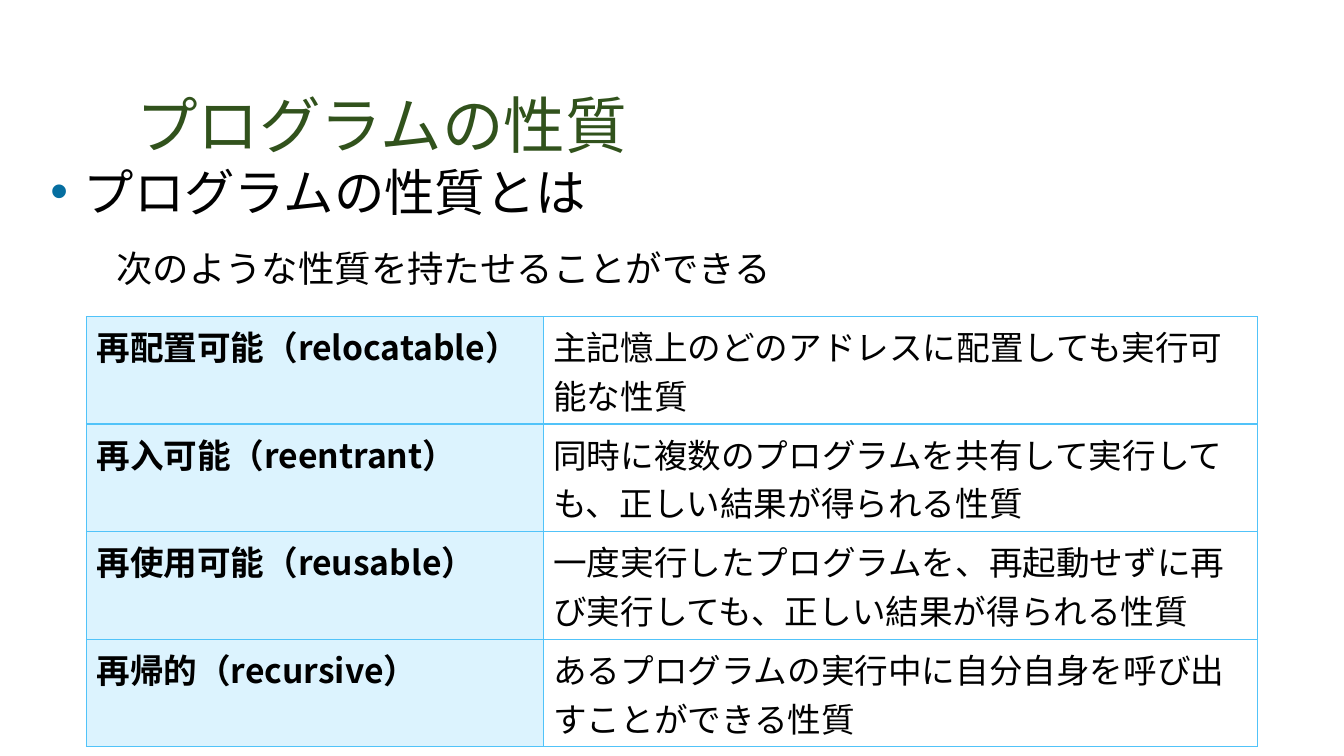
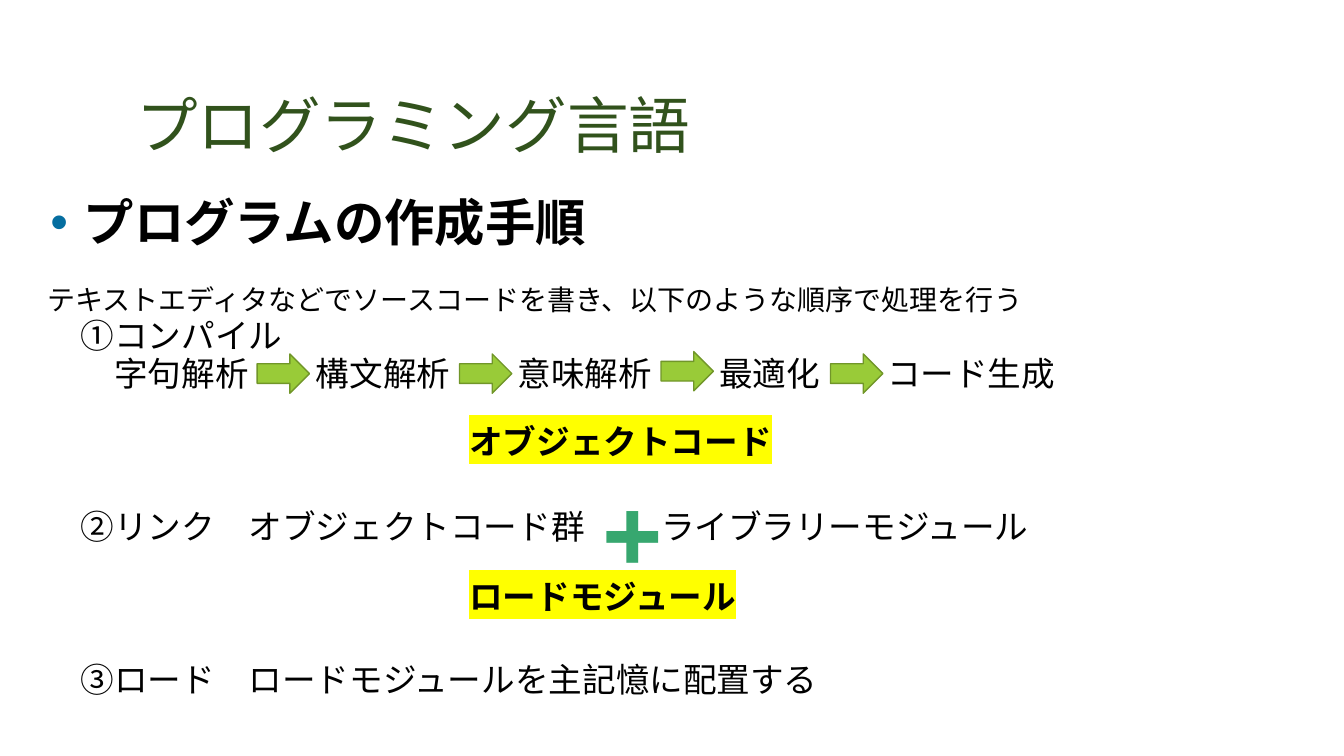
from dataclasses import dataclass

from lxml.etree import SubElement
from pptx import Presentation
from pptx.dml.color import RGBColor
from pptx.enum.shapes import MSO_SHAPE as Preset
from pptx.enum.text import MSO_ANCHOR as Anchor
from pptx.oxml.ns import qn
from pptx.util import Cm, Pt

BLACK = RGBColor(0x00, 0x00, 0x00)
TITLE_GREEN = RGBColor(0x31, 0x52, 0x1C)
BULLET_BLUE = RGBColor(0x05, 0x6E, 0xA0)
BORDER_BLUE = RGBColor(0x51, 0xC3, 0xF9)
CELL_BLUE = RGBColor(0xDC, 0xF3, 0xFE)
ARROW_FILL = RGBColor(0x99, 0xCB, 0x38)
ARROW_LINE = RGBColor(0x71, 0x96, 0x29)
PLUS_GREEN = RGBColor(0x37, 0xA7, 0x6F)
YELLOW = RGBColor(0xFF, 0xFF, 0x00)

JAPANESE = "Noto Sans CJK JP"
LATIN = "TeX Gyre Adventor"
TEXT_SIZE = 24
LINE_RATIO = 1.14
LINE_HEIGHT = TEXT_SIZE * LINE_RATIO


@dataclass(frozen=True)
class Area:
    left: float
    top: float
    width: float
    height: float

    def lengths(self) -> tuple:
        return Cm(self.left), Cm(self.top), Cm(self.width), Cm(self.height)


@dataclass(frozen=True)
class Style:
    size: float
    font: str = LATIN
    color: RGBColor = BLACK
    bold: bool = False
    highlight: RGBColor | None = None
    east_asian: str = JAPANESE


@dataclass(frozen=True)
class Step:
    phrases: tuple[str, ...]
    stops: tuple[float, ...] = ()
    size: float = TEXT_SIZE
    lines_before: int = 0


@dataclass(frozen=True)
class Property:
    name: str
    meaning: str


TITLE_AREA = Area(3.1, 0.2, 28.22, 3.89)
TITLE_STYLE = Style(44, JAPANESE, TITLE_GREEN)
RESULT_STYLE = Style(TEXT_SIZE, bold=True, highlight=YELLOW)
PLUS_STYLE = Style(66, color=PLUS_GREEN, bold=True, east_asian=LATIN)

PROPERTIES = (
    Property("再配置可能（relocatable）", "主記憶上のどのアドレスに配置しても実行可能な性質"),
    Property("再入可能（reentrant）", "同時に複数のプログラムを共有して実行しても、正しい結果が得られる性質"),
    Property("再使用可能（reusable）", "一度実行したプログラムを、再起動せずに再び実行しても、正しい結果が得られる性質"),
    Property("再帰的（recursive）", "あるプログラムの実行中に自分自身を呼び出すことができる性質"),
)

STEPS = (
    Step(("テキストエディタなどでソースコードを書き、以下のような順序で処理を行う",), size=20),
    Step(("", "①コンパイル"), (1,)),
    Step(("", "字句解析", "構文解析", "意味解析", "最適化", "コード生成"), (2, 8, 14, 20, 25)),
    Step(("", "②リンク", "オブジェクトコード群", "ライブラリーモジュール"), (1, 6, 18.27), lines_before=3),
    Step(("", "③ロード", "ロードモジュールを主記憶に配置する"), (1, 6), lines_before=3),
)

ARROWS = tuple(
    Area(left, top, 1.32, 0.99)
    for left, top in ((6.48, 8.92), (11.58, 8.92), (16.66, 8.86), (20.93, 8.92))
)

RESULTS = (("オブジェクトコード", 10.52), ("ロードモジュール", 14.43))


def add_span(para, text: str, style: Style) -> None:
    span = para.add_run()
    span.text = text
    font = span.font
    font.size = Pt(style.size)
    font.bold = style.bold
    font.color.rgb = style.color
    font.name = style.font
    props = span._r.get_or_add_rPr()
    latin = props.find(qn("a:latin"))
    asian = SubElement(props, qn("a:ea"), typeface=style.east_asian)
    latin.addnext(asian)
    if style.highlight is not None:
        mark = SubElement(props, qn("a:highlight"))
        SubElement(mark, qn("a:srgbClr"), val=str(style.highlight))
        latin.addprevious(mark)


def add_box(slide, area: Area, side: float = 0.25, edge: float = 0.13):
    frame = slide.shapes.add_textbox(*area.lengths()).text_frame
    frame.word_wrap = True
    frame.margin_left = frame.margin_right = Cm(side)
    frame.margin_top = frame.margin_bottom = Cm(edge)
    return frame


def add_title(slide, text: str) -> None:
    frame = add_box(slide, TITLE_AREA, 0.33, 0.18)
    frame.margin_bottom = Cm(0.03)
    frame.vertical_anchor = Anchor.BOTTOM
    para = frame.paragraphs[0]
    para.line_spacing = 0.85
    add_span(para, text, TITLE_STYLE)


def add_heading(slide, area: Area, text: str, bold: bool = False):
    frame = add_box(slide, area, 0.33, 0.18)
    para = frame.paragraphs[0]
    style = Style(36, JAPANESE, bold=bold)
    para.line_spacing = Pt(style.size * LINE_RATIO)
    props = para._p.get_or_add_pPr()
    props.set("marL", str(Cm(0.84)))
    props.set("indent", str(-Cm(0.84)))
    color = SubElement(props, qn("a:buClr"))
    SubElement(color, qn("a:srgbClr"), val=str(BULLET_BLUE))
    SubElement(props, qn("a:buFont"), typeface="Arial")
    SubElement(props, qn("a:buChar"), char="•")
    add_span(para, text, style)
    return frame


def set_borders(cell, bottom: float) -> None:
    props = cell._tc.get_or_add_tcPr()
    widths = (("lnL", 1), ("lnR", 1), ("lnT", 1), ("lnB", bottom))
    for position, (side, width) in enumerate(widths):
        line = SubElement(props, qn(f"a:{side}"), w=str(Pt(width)))
        fill = SubElement(line, qn("a:solidFill"))
        SubElement(fill, qn("a:srgbClr"), val=str(BORDER_BLUE))
        props.insert(position, line)


def add_property_table(slide, area: Area) -> None:
    table = slide.shapes.add_table(len(PROPERTIES), 2, *area.lengths()).table
    table.first_row = table.horz_banding = False
    for column, width in zip(table.columns, (11.51, 18.01)):
        column.width = Cm(width)
    for row_index, item in enumerate(PROPERTIES):
        for column_index, text in enumerate((item.name, item.meaning)):
            cell = table.cell(row_index, column_index)
            is_name = column_index == 0
            if is_name:
                cell.fill.solid()
                cell.fill.fore_color.rgb = CELL_BLUE
            else:
                cell.fill.background()
            set_borders(cell, 2 if row_index == 0 else 1)
            style = Style(TEXT_SIZE, JAPANESE if is_name else LATIN, bold=is_name)
            add_span(cell.text_frame.paragraphs[0], text, style)


def add_steps(slide, area: Area) -> None:
    frame = add_box(slide, area)
    for index, step in enumerate(STEPS):
        para = frame.add_paragraph() if index else frame.paragraphs[0]
        para.line_spacing = Pt(LINE_HEIGHT)
        para.space_before = Pt(step.lines_before * LINE_HEIGHT)
        if step.stops:
            tabs = SubElement(para._p.get_or_add_pPr(), qn("a:tabLst"))
            for stop in step.stops:
                SubElement(tabs, qn("a:tab"), pos=str(Pt(stop * TEXT_SIZE)), algn="l")
        add_span(para, "\t".join(step.phrases), Style(step.size))


def add_arrow(slide, area: Area) -> None:
    arrow = slide.shapes.add_shape(Preset.RIGHT_ARROW, *area.lengths())
    arrow.shadow.inherit = False
    arrow.fill.solid()
    arrow.fill.fore_color.rgb = ARROW_FILL
    arrow.line.color.rgb = ARROW_LINE
    arrow.line.width = Pt(1)


def add_label(slide, area: Area, text: str, style: Style, spacing) -> None:
    para = add_box(slide, area).paragraphs[0]
    para.line_spacing = spacing
    add_span(para, text, style)


def build_properties(slide) -> None:
    add_title(slide, "プログラムの性質")
    frame = add_heading(slide, Area(0.94, 3.96, 32, 14.35), "プログラムの性質とは")
    para = frame.add_paragraph()
    style = Style(26, JAPANESE)
    para.line_spacing = Pt(style.size * LINE_RATIO)
    para.space_before = Pt(18.7)
    para._p.get_or_add_pPr().set("marL", str(Cm(1.66)))
    add_span(para, "次のような性質を持たせることができる", style)
    add_property_table(slide, Area(2.18, 7.98, 29.52, 10.84))


def build_procedure(slide) -> None:
    add_title(slide, "プログラミング言語")
    add_heading(slide, Area(0.94, 4.72, 32, 2.21), "プログラムの作成手順", bold=True)
    add_steps(slide, Area(0.94, 6.88, 32, 10.97))
    for area in ARROWS:
        add_arrow(slide, area)
    for text, top in RESULTS:
        add_label(slide, Area(11.58, top, 8.2, 1.22), text, RESULT_STYLE, Pt(LINE_HEIGHT))
    add_label(slide, Area(14.86, 11.86, 1.6, 2.95), "+", PLUS_STYLE, 0.95)


def main() -> None:
    deck = Presentation()
    deck.slide_width, deck.slide_height = Cm(33.87), Cm(19.05)
    blank = deck.slide_layouts[6]
    for build in (build_properties, build_procedure):
        build(deck.slides.add_slide(blank))
    deck.save("out.pptx")


if __name__ == "__main__":
    main()
